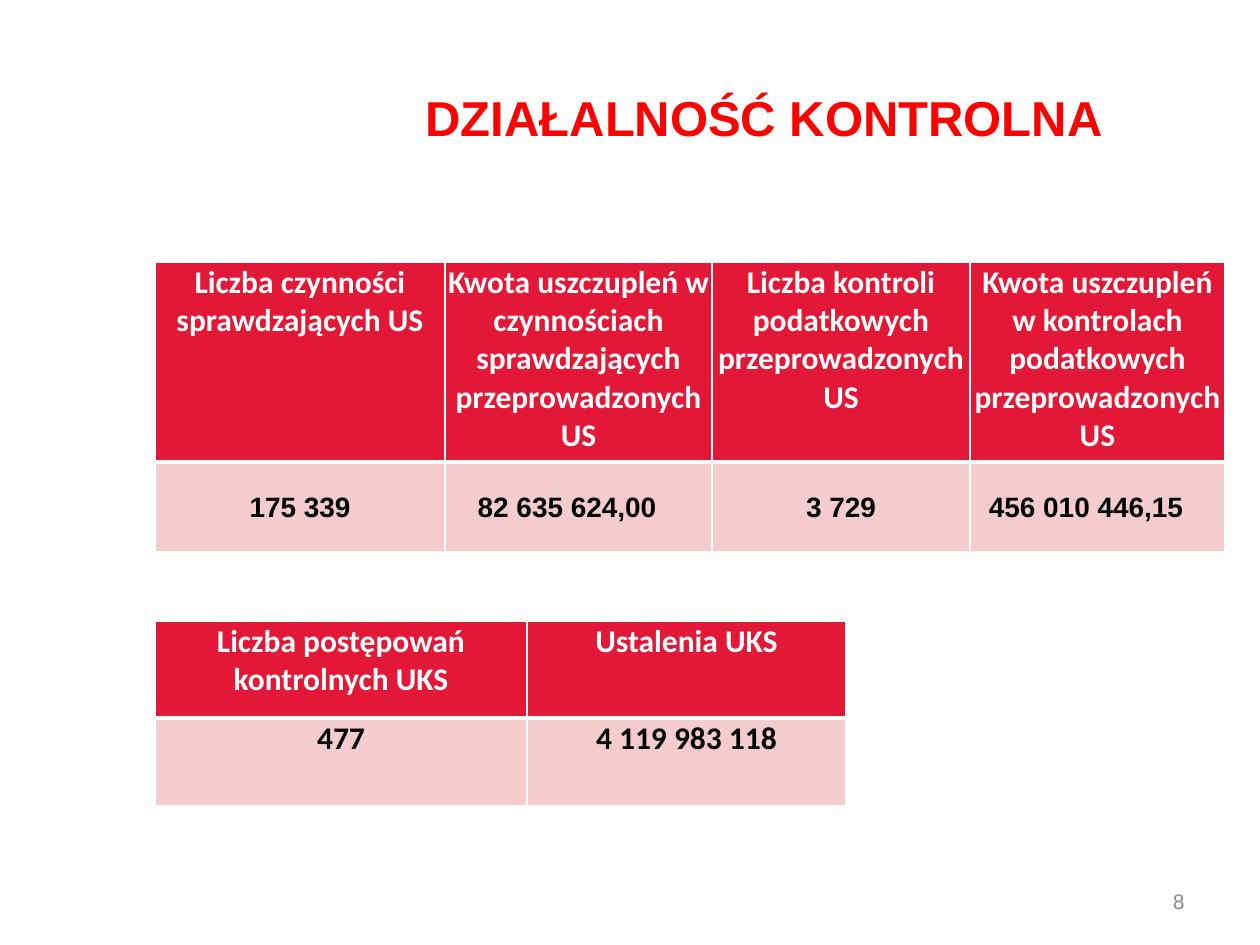
from lxml.etree import SubElement
from pptx import Presentation
from pptx.dml.color import RGBColor
from pptx.enum.text import MSO_ANCHOR, PP_ALIGN
from pptx.oxml.ns import qn
from pptx.util import Emu, Pt

PX_PER_INCH = 126
WHITE = RGBColor(0xFF, 0xFF, 0xFF)
BLACK = RGBColor(0, 0, 0)
RED = RGBColor(0xFF, 0, 0)
CRIMSON = RGBColor(0xE3, 0x18, 0x37)
PINK = RGBColor(0xF4, 0xCC, 0xCE)
GRAY = RGBColor(0x89, 0x89, 0x89)

AUDIT_HEADERS = [
    "Liczba czynności sprawdzających US",
    "Kwota uszczupleń w czynnościach sprawdzających przeprowadzonych\nUS",
    "Liczba kontroli podatkowych przeprowadzonych US",
    "Kwota uszczupleń w kontrolach podatkowych przeprowadzonych US",
]
AUDIT_VALUES = ["175 339", "82 635 624,00", "3 729", "456 010 446,15"]
UKS_HEADERS = ["Liczba postępowań kontrolnych UKS", "Ustalenia UKS"]
UKS_VALUES = ["477", "4 119 983 118"]


def px(length):
    return Emu(round(length * 914400 / PX_PER_INCH))


def write_text(frame, text, *, size, color, font="Arial", bold=False,
               align=PP_ALIGN.CENTER):
    frame.word_wrap = True
    frame.text = text
    for paragraph in frame.paragraphs:
        paragraph.alignment = align
        paragraph.font.size = Pt(size)
        for run in paragraph.runs:
            run.font.name = font
            run.font.size = Pt(size)
            run.font.bold = bold
            run.font.color.rgb = color


def add_label(slide, left, top, width, height, text, **text_format):
    label = slide.shapes.add_textbox(px(left), px(top), px(width), px(height))
    label.text_frame.vertical_anchor = MSO_ANCHOR.MIDDLE
    write_text(label.text_frame, text, **text_format)


def add_borders(cell, bottom):
    properties = cell._tc.get_or_add_tcPr()
    for side, points in (("L", 1), ("R", 1), ("T", 1), ("B", bottom)):
        line = SubElement(properties, qn(f"a:ln{side}"), w=str(Pt(points)))
        fill = SubElement(line, qn("a:solidFill"))
        SubElement(fill, qn("a:srgbClr"), val=str(WHITE))


def fill_cell(cell, text, fill, *, border_bottom=1, anchor=MSO_ANCHOR.TOP,
              margin_right=1, **text_format):
    add_borders(cell, border_bottom)
    cell.fill.solid()
    cell.fill.fore_color.rgb = fill
    cell.margin_left = cell.margin_top = px(1)
    cell.margin_right = px(margin_right)
    cell.margin_bottom = 0
    cell.vertical_anchor = anchor
    write_text(cell.text_frame, text, bold=True, **text_format)


def add_results_table(slide, left, top, widths, heights, headers, values,
                      value_margins, **value_format):
    table = slide.shapes.add_table(
        2, len(widths), px(left), px(top), px(sum(widths)), px(sum(heights))
    ).table
    table.first_row = table.horz_banding = False
    for row, height in zip(table.rows, heights):
        row.height = px(height)
    for index, width in enumerate(widths):
        table.columns[index].width = px(width)
        fill_cell(table.cell(0, index), headers[index], CRIMSON,
                  border_bottom=3, size=18, color=WHITE, font="Calibri")
        fill_cell(table.cell(1, index), values[index], PINK, color=BLACK,
                  margin_right=value_margins[index], **value_format)


def main():
    presentation = Presentation()
    presentation.slide_width = px(1260)
    presentation.slide_height = px(945)
    slide = presentation.slides.add_slide(presentation.slide_layouts[6])

    add_results_table(slide, 155, 262, [290, 267, 258, 255], [200, 90],
                      AUDIT_HEADERS, AUDIT_VALUES, [1, 24, 1, 24],
                      size=16, anchor=MSO_ANCHOR.MIDDLE)
    add_label(slide, 903, 876, 294, 50, "8", size=12, color=GRAY,
              align=PP_ALIGN.RIGHT)
    add_results_table(slide, 155, 621, [372, 319], [97, 88],
                      UKS_HEADERS, UKS_VALUES, [1, 1],
                      size=18, font="Calibri")
    add_label(slide, 331, 38, 866, 158, "DZIAŁALNOŚĆ KONTROLNA",
              size=28, color=RED, bold=True)

    presentation.save("out.pptx")


if __name__ == "__main__":
    main()
